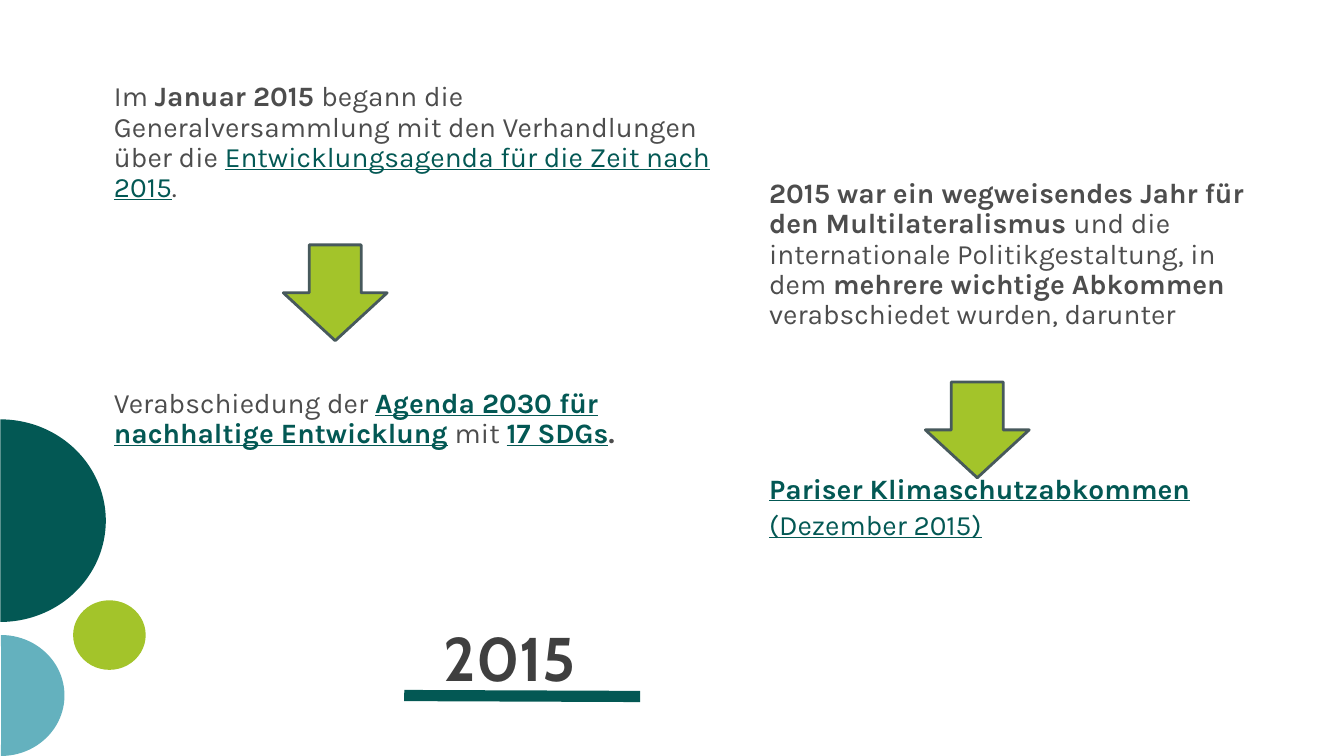
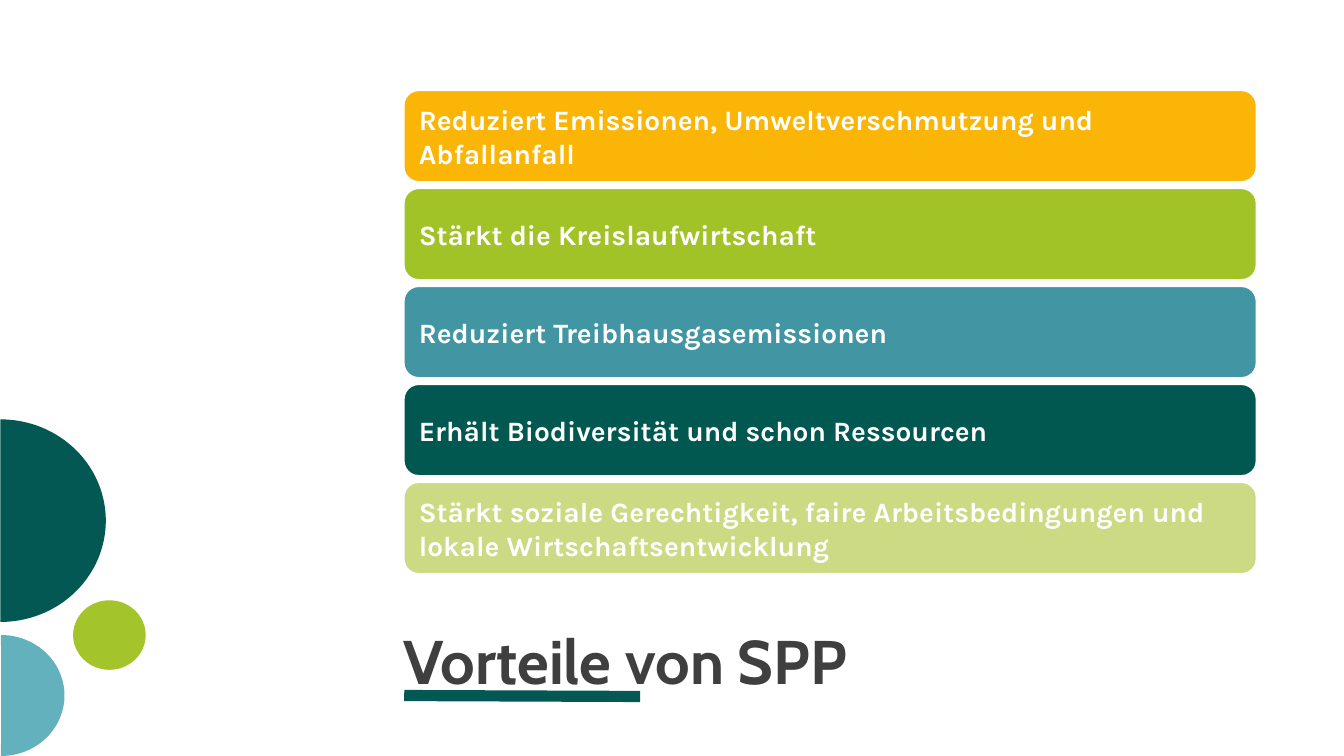
from lxml.etree import SubElement
from pptx import Presentation
from pptx.dml.color import RGBColor
from pptx.enum.shapes import MSO_CONNECTOR, MSO_SHAPE
from pptx.enum.text import MSO_ANCHOR, PP_ALIGN
from pptx.oxml.ns import qn
from pptx.util import Inches, Pt

WIDTH, HEIGHT = Inches(13.333), Inches(7.5)

WHITE = RGBColor(0xFF, 0xFF, 0xFF)
TITLE_GREY = RGBColor(0x3F, 0x3F, 0x3F)
TEXT_GREY = RGBColor(0x4D, 0x4D, 0x4D)
OUTLINE_GREY = RGBColor(0x47, 0x59, 0x5C)
GREEN = RGBColor(0x03, 0x58, 0x54)
LIME = RGBColor(0xA3, 0xC4, 0x2A)
SKY = RGBColor(0x64, 0xB1, 0xBE)
BAND_ORANGE = RGBColor(0xFA, 0xB5, 0x06)
BAND_LIME = RGBColor(0xA2, 0xC3, 0x28)
BAND_TEAL = RGBColor(0x42, 0x95, 0xA2)
BAND_GREEN = RGBColor(0x00, 0x58, 0x51)
BAND_PALE = RGBColor(0xCB, 0xDA, 0x83)

TITLE_FONT, BODY_FONT = "Cabin", "Karla"

# Shares of the slide, in percent
LEFT_COLUMN, LEFT_WIDTH = 8.48, 46.5
RIGHT_COLUMN, RIGHT_WIDTH = 57.23, 37.3
TITLE_HEIGHT = 20.13
ARROW_WIDTH, ARROW_HEIGHT = 7.73, 12.67
BAND_LEFT, BAND_TOP, BAND_WIDTH, BAND_HEIGHT = 30, 11.87, 63.53, 12.27
BAND_STEP = 12.96

# Pie angles from twelve to six o'clock, in units of 100000 / 60000 degrees
RIGHT_HALF = (162, 54)

PLAIN, BOLD, LINK, BOLD_LINK = (
    {"bold": bold, "underline": link, "color": GREEN if link else TEXT_GREY}
    for link in (False, True) for bold in (False, True))


def place(left, top, width, height):
    """Turn percentages of the slide into lengths."""
    return (int(WIDTH * left / 100), int(HEIGHT * top / 100),
            int(WIDTH * width / 100), int(HEIGHT * height / 100))


def write(shape, spans, font=BODY_FONT, size=20, spacing=1.0,
          anchor=MSO_ANCHOR.TOP, margin=0):
    """Fill a shape with one paragraph of (text, style) spans."""
    frame = shape.text_frame
    frame.word_wrap = True
    frame.vertical_anchor = anchor
    frame.margin_left = frame.margin_right = Inches(margin)
    frame.margin_top = frame.margin_bottom = Inches(margin)
    para = frame.paragraphs[0]
    para.alignment = PP_ALIGN.LEFT
    para.line_spacing = spacing
    for text, style in spans:
        span = para.add_run()
        span.text = text
        span.font.name = font
        span.font.size = Pt(size)
        span.font.bold = style["bold"]
        span.font.underline = style["underline"]
        span.font.color.rgb = style["color"]


def add_text(page, area, spans, **text_format):
    write(page.shapes.add_textbox(*place(*area)), spans, **text_format)


def add_filled(page, kind, area, fill, outline=None, adjustments=()):
    shape = page.shapes.add_shape(kind, *place(*area))
    shape.shadow.inherit = False
    shape.fill.solid()
    shape.fill.fore_color.rgb = fill
    if outline is None:
        shape.line.fill.background()
    else:
        shape.line.color.rgb = outline
        shape.line.width = Pt(2)
    for index, value in enumerate(adjustments):
        shape.adjustments[index] = value
    return shape


def add_round(page, kind, center, size, fill, adjustments=()):
    (x, y), (width, height) = center, size
    area = (x - width / 2, y - height / 2, width, height)
    add_filled(page, kind, area, fill, adjustments=adjustments)


def add_arrow(page, left, top):
    add_filled(page, MSO_SHAPE.DOWN_ARROW,
               (left, top, ARROW_WIDTH, ARROW_HEIGHT), LIME, OUTLINE_GREY)


def add_band(page, row, text, fill):
    area = (BAND_LEFT, BAND_TOP + row * BAND_STEP, BAND_WIDTH, BAND_HEIGHT)
    band = add_filled(page, MSO_SHAPE.ROUNDED_RECTANGLE, area, fill, WHITE)
    write(band, [(text, {**BOLD, "color": WHITE})],
          anchor=MSO_ANCHOR.MIDDLE, margin=0.11)


def add_title_rule(page):
    left, top, width, height = place(30.08, 92, 17.55, 0.13)
    rule = page.shapes.add_connector(
        MSO_CONNECTOR.STRAIGHT, left, top, left + width, top + height)
    rule.line.color.rgb = GREEN
    rule.line.width = Pt(8)
    SubElement(rule.element.spPr, qn("a:effectLst"))


def add_page(deck, title, left, top, width, anchor):
    """Add a slide with the shared circles, rule and title."""
    page = deck.slides.add_slide(deck.slide_layouts[6])
    add_title_rule(page)
    add_round(page, MSO_SHAPE.PIE, (0.04, 68.87), (15.68, 26.8), GREEN, RIGHT_HALF)
    add_round(page, MSO_SHAPE.PIE, (0.08, 92), (9.45, 16), SKY, RIGHT_HALF)
    add_round(page, MSO_SHAPE.OVAL, (8.14, 84), (5.4, 9.2), LIME)
    add_text(page, (left, top, width, TITLE_HEIGHT),
             [(title, {**BOLD, "color": TITLE_GREY})],
             font=TITLE_FONT, size=44, spacing=0.8, anchor=anchor)
    return page


def add_year_page(deck):
    page = add_page(deck, "2015", 33, 77.73, 18, MSO_ANCHOR.MIDDLE)
    add_text(page, (LEFT_COLUMN, 10.93, LEFT_WIDTH, 17), [
        ("Im ", PLAIN),
        ("Januar 2015 ", BOLD),
        ("begann die Generalversammlung mit den Verhandlungen über die ", PLAIN),
        ("Entwicklungsagenda für die Zeit nach 2015", LINK),
        (".", PLAIN)], spacing=0.9)
    add_text(page, (LEFT_COLUMN, 51.47, LEFT_WIDTH, 9), [
        ("Verabschiedung der ", PLAIN),
        ("Agenda 2030 für nachhaltige Entwicklung", BOLD_LINK),
        (" mit ", PLAIN),
        ("17 SDGs", BOLD_LINK),
        (".", BOLD)], spacing=0.9)
    add_text(page, (RIGHT_COLUMN, 23.73, RIGHT_WIDTH, 21), [
        ("2015 war ein wegweisendes Jahr für den Multilateralismus ", BOLD),
        ("und die internationale Politikgestaltung, in dem ", PLAIN),
        ("mehrere wichtige Abkommen ", BOLD),
        ("verabschiedet wurden, darunter", PLAIN)], spacing=0.9)
    add_text(page, (RIGHT_COLUMN, 61.87, RIGHT_WIDTH, 11), [
        ("Pariser Klimaschutzabkommen ", BOLD_LINK),
        ("(Dezember 2015)", LINK)], spacing=1.1)
    add_arrow(page, 21.08, 32.4)
    add_arrow(page, 68.85, 50.53)


def add_benefits_page(deck):
    page = add_page(deck, "Vorteile von SPP", 30, 72, 65.1, MSO_ANCHOR.BOTTOM)
    benefits = [
        ("Reduziert Emissionen, Umweltverschmutzung und Abfallanfall", BAND_ORANGE),
        ("Stärkt die Kreislaufwirtschaft", BAND_LIME),
        ("Reduziert Treibhausgasemissionen", BAND_TEAL),
        ("Erhält Biodiversität und schon Ressourcen", BAND_GREEN),
        ("Stärkt soziale Gerechtigkeit, faire Arbeitsbedingungen und "
         "lokale Wirtschaftsentwicklung", BAND_PALE),
    ]
    for row, (text, fill) in enumerate(benefits):
        add_band(page, row, text, fill)


def main():
    deck = Presentation()
    deck.slide_width, deck.slide_height = WIDTH, HEIGHT
    add_year_page(deck)
    add_benefits_page(deck)
    deck.save("out.pptx")


if __name__ == "__main__":
    main()
